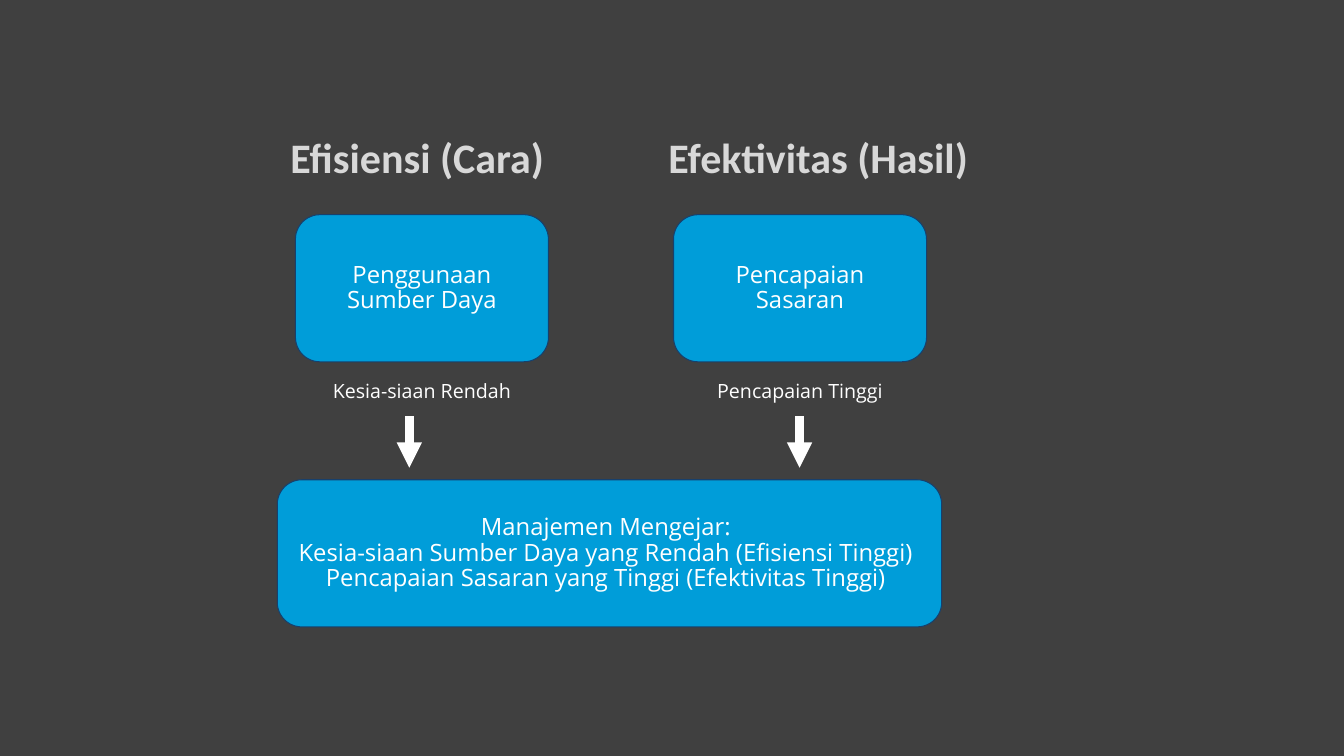
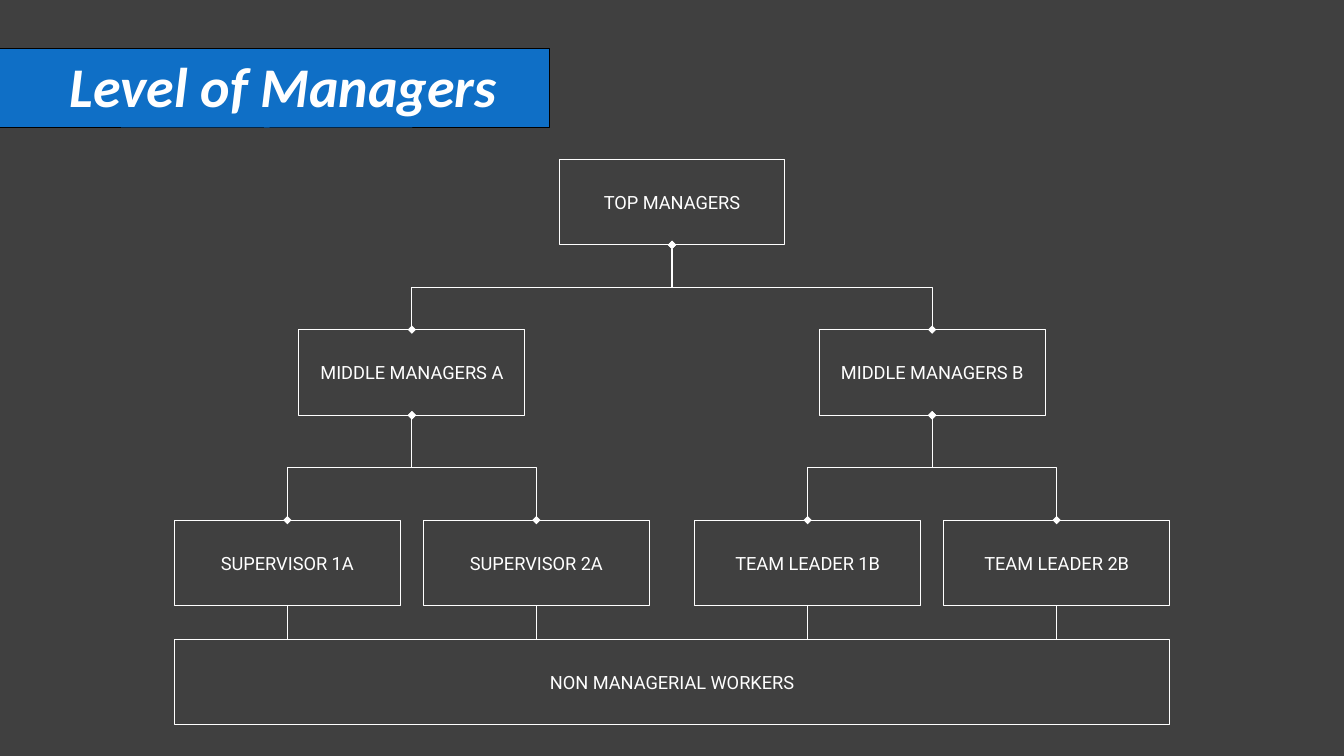
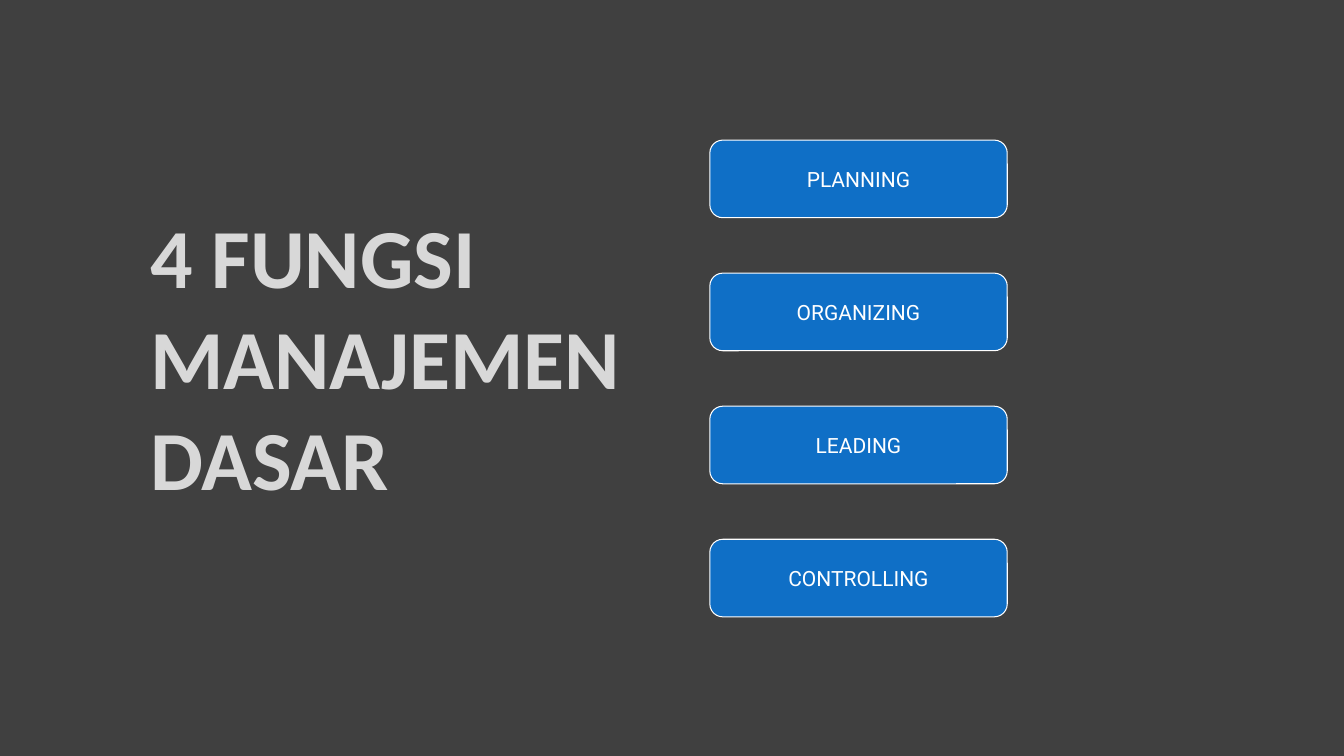
from lxml import etree
from pptx import Presentation
from pptx import util as u
from pptx.dml import color
from pptx.enum import shapes, text
from pptx.oxml import ns

WIDTH, HEIGHT = 13.33, 7.5
GREY, SKY, BLUE, NAVY = "404040", "009DD9", "0F6FC6", "17406D"
WHITE, BLACK, SILVER = "FFFFFF", "000000", "D8D8D8"
RECTANGLE, ROUNDED = shapes.MSO_SHAPE.RECTANGLE, shapes.MSO_SHAPE.ROUNDED_RECTANGLE
CENTER, JUSTIFY = text.PP_ALIGN.CENTER, text.PP_ALIGN.JUSTIFY

HEADING = dict(size=30, font="Calibri", color=SILVER, bold=True, align=JUSTIFY)
BIG_TITLE = dict(HEADING, size=60)
BAND_TITLE = dict(size=40, font="Calibri", bold=True, italic=True)
BODY = dict(size=17, font="Open Sans", spacing=0.9)
CAPTION = dict(BODY, size=14)
CHART_LABEL = dict(size=13, font="Roboto")
FUNCTION_LABEL = dict(size=15, font="Roboto")
TEXT_INSETS = (0.13, 0.06, 0.13, 0.06)

GOALS = [
    dict(left=2.93, arrow=4.06, heading="Efisiensi (Cara)",
         means=["Penggunaan", "Sumber Daya"], caption="Kesia-siaan Rendah"),
    dict(left=6.68, arrow=7.93, heading="Efektivitas (Hasil)",
         means=["Pencapaian Sasaran"], caption="Pencapaian Tinggi"),
]
PURSUIT = [
    "Manajemen Mengejar:",
    "Kesia-siaan Sumber Daya yang Rendah (Efisiensi Tinggi)",
    "Pencapaian Sasaran yang Tinggi (Efektivitas Tinggi)",
]
TOP_MANAGERS = "TOP MANAGERS"
DIVISIONS = [
    ("MIDDLE MANAGERS A", ["SUPERVISOR 1A", "SUPERVISOR 2A"]),
    ("MIDDLE MANAGERS B", ["TEAM LEADER 1B", "TEAM LEADER 2B"]),
]
WORKERS = "NON MANAGERIAL WORKERS"
FUNCTIONS_TITLE = ["4 FUNGSI", "MANAJEMEN", "DASAR"]
FUNCTIONS = ["PLANNING", "ORGANIZING", "LEADING", "CONTROLLING"]


def rgb(value):
    return color.RGBColor.from_string(value)


def inches(values):
    return [u.Inches(value) for value in values]


def write(shape, lines, insets, size, font, color=WHITE, bold=False, italic=False,
          align=CENTER, spacing=1.0, anchor=text.MSO_ANCHOR.MIDDLE):
    frame = shape.text_frame
    frame.word_wrap = True
    frame.vertical_anchor = anchor
    (frame.margin_left, frame.margin_top,
     frame.margin_right, frame.margin_bottom) = inches(insets)
    for number, line in enumerate(lines):
        paragraph = frame.add_paragraph() if number else frame.paragraphs[0]
        paragraph.alignment = align
        paragraph.line_spacing = spacing
        run = paragraph.add_run()
        run.text = line
        run.font.size = u.Pt(size)
        run.font.name = font
        run.font.bold = bold
        run.font.italic = italic
        run.font.color.rgb = rgb(color)


def add_text(slide, at, lines, style, insets=TEXT_INSETS):
    write(slide.shapes.add_textbox(*inches(at)), lines, insets,
          anchor=text.MSO_ANCHOR.TOP, **style)


def add_box(slide, kind, at, lines, style, fill=None, line=WHITE, insets=(0.13,) * 4):
    shape = slide.shapes.add_shape(kind, *inches(at))
    shape.shadow.inherit = False
    if fill:
        shape.fill.solid()
        shape.fill.fore_color.rgb = rgb(fill)
    else:
        shape.fill.background()
    shape.line.color.rgb = rgb(line)
    shape.line.width = u.Pt(0.75)
    write(shape, lines, insets, **style)


def add_line(slide, start, end, width=0.75, head=None, tail=None,
             kind=shapes.MSO_CONNECTOR.STRAIGHT):
    connector = slide.shapes.add_connector(kind, *inches(start + end))
    connector.line.color.rgb = rgb(WHITE)
    connector.line.width = u.Pt(width)
    outline = connector.line._get_or_add_ln()
    for tag, tip in (("a:headEnd", head), ("a:tailEnd", tail)):
        if tip:
            etree.SubElement(outline, ns.qn(tag)).set("type", tip)
    etree.SubElement(connector._element.spPr, ns.qn("a:effectLst"))
    return connector


def add_branch(slide, parent, child):
    (x1, y1), (x2, y2) = parent, child
    x, y = (x1 + x2) / 2, (y1 + y2) / 2
    side = 1 if x2 > x1 else -1
    rise, run = side * (y2 - y1) / 2, abs(x2 - x1) / 2
    connector = add_line(slide, (x + rise, y - run), (x - rise, y + run),
                         head="diamond", tail="diamond", kind=shapes.MSO_CONNECTOR.ELBOW)
    degrees = 270 if side > 0 else 90
    connector._element.spPr.find(ns.qn("a:xfrm")).set("rot", str(degrees * 60000))


def build_goals(slide):
    width, height = 2.51, 1.46
    for goal in GOALS:
        left = goal["left"]
        add_box(slide, ROUNDED, (left, 2.13, width, height), goal["means"], BODY,
                SKY, NAVY, (0.2, 0.1, 0.2, 0.1))
        add_text(slide, (left - 0.18, 1.25, 3.6, 0.66), [goal["heading"]], HEADING)
        add_text(slide, (left, 3.69, width, 0.44), [goal["caption"]], CAPTION, (0.1,) * 4)
        add_line(slide, (goal["arrow"], 4.13), (goal["arrow"], 4.64), 6, tail="triangle")
    add_box(slide, ROUNDED, (2.75, 4.76, 6.59, height), PURSUIT, BODY,
            SKY, NAVY, (0.05, 0.1, 0.12, 0.1))


def build_levels(slide):
    width, height = 2.24, 0.85
    top_y, middle_y, lead_y, worker_y = 1.58, 3.27, 5.16, 6.34
    first, pitch, division_pitch = 2.85, 2.47, 5.16

    def add_level(center, y, label):
        add_box(slide, RECTANGLE, (center - width / 2, y, width, height), [label], CHART_LABEL)

    add_box(slide, RECTANGLE, (-0.16, 0.48, 5.61, 0.79), ["Level of Managers"], BAND_TITLE,
            BLUE, BLACK, (0.46, 0, 0.13, 0.07))
    top_x = WIDTH / 2
    for column, (manager, leads) in enumerate(DIVISIONS):
        start = first + column * division_pitch
        middle_x = start + pitch / 2
        add_branch(slide, (top_x, top_y + height), (middle_x, middle_y))
        for place, lead in enumerate(leads):
            lead_x = start + place * pitch
            add_branch(slide, (middle_x, middle_y + height), (lead_x, lead_y))
            add_line(slide, (lead_x, lead_y + height), (lead_x, worker_y))
            add_level(lead_x, lead_y, lead)
        add_level(middle_x, middle_y, manager)
    add_level(top_x, top_y, TOP_MANAGERS)
    span = division_pitch + pitch + width
    add_box(slide, RECTANGLE, (first - width / 2, worker_y, span, height), [WORKERS], CHART_LABEL)


def build_functions(slide):
    for row, label in enumerate(FUNCTIONS):
        add_box(slide, ROUNDED, (7.04, 1.39 + row * 1.32, 2.95, 0.77), [label],
                FUNCTION_LABEL, BLUE)
    add_text(slide, (1.36, 1.97, 5.5, 3.2), FUNCTIONS_TITLE, BIG_TITLE)


def main():
    presentation = Presentation()
    presentation.slide_width, presentation.slide_height = inches((WIDTH, HEIGHT))
    background = presentation.slide_master.background.fill
    background.solid()
    background.fore_color.rgb = rgb(GREY)
    for build in (build_goals, build_levels, build_functions):
        build(presentation.slides.add_slide(presentation.slide_layouts[6]))
    presentation.save("out.pptx")


if __name__ == "__main__":
    main()
